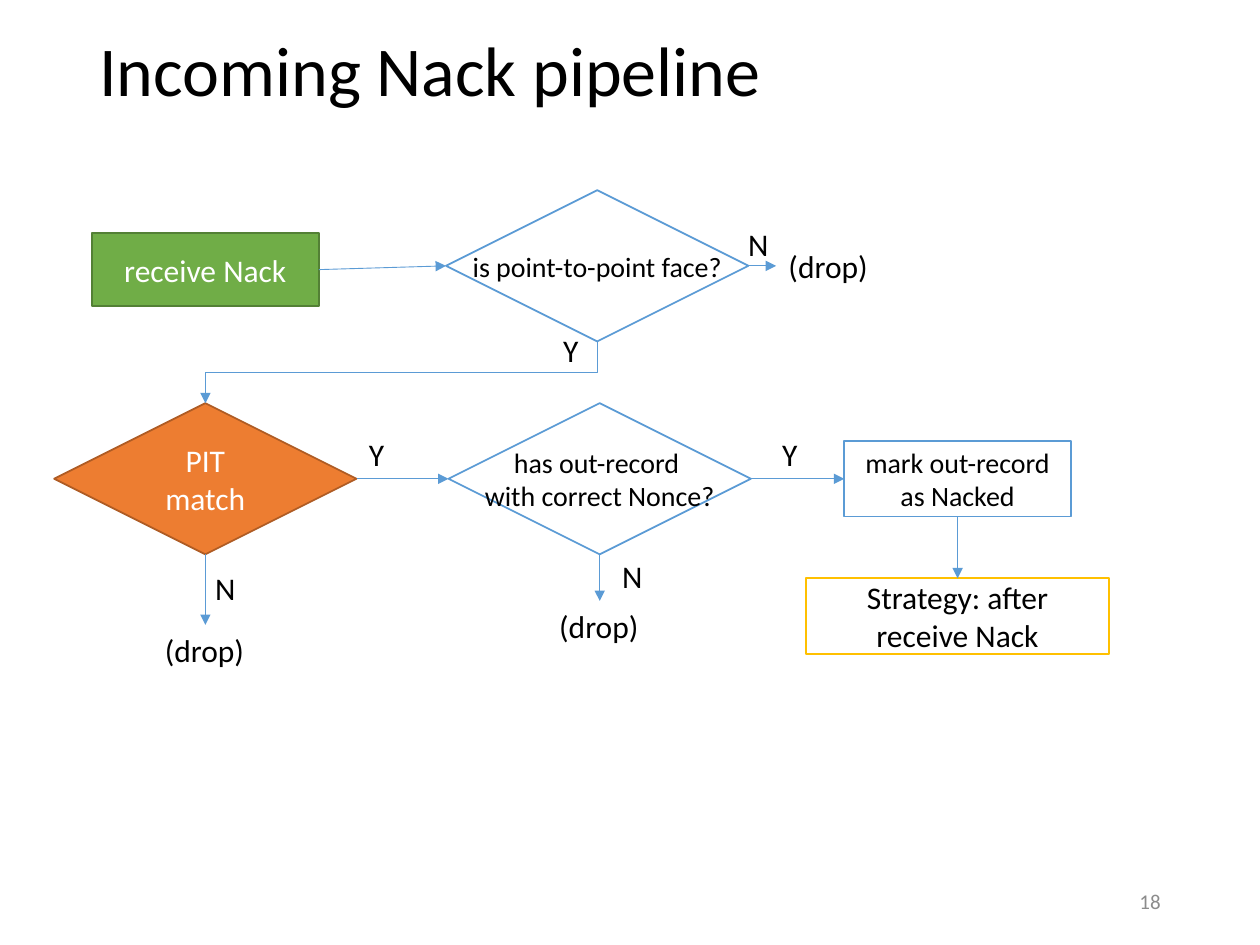
from dataclasses import dataclass

from lxml import etree
from pptx import Presentation
from pptx.dml.color import RGBColor
from pptx.enum.shapes import MSO_CONNECTOR, MSO_SHAPE
from pptx.enum.text import MSO_ANCHOR, MSO_AUTO_SIZE, PP_ALIGN
from pptx.oxml.ns import qn
from pptx.util import Inches, Pt

DECISION = MSO_SHAPE.FLOWCHART_DECISION
RECTANGLE = MSO_SHAPE.RECTANGLE
STRAIGHT, ELBOW = MSO_CONNECTOR.STRAIGHT, MSO_CONNECTOR.ELBOW
LEFT, CENTER, RIGHT = PP_ALIGN.LEFT, PP_ALIGN.CENTER, PP_ALIGN.RIGHT
TOP_ANCHOR, MIDDLE = MSO_ANCHOR.TOP, MSO_ANCHOR.MIDDLE
FIT_SHAPE = MSO_AUTO_SIZE.SHAPE_TO_FIT_TEXT
TOP_SIDE, LEFT_SIDE, BOTTOM_SIDE, RIGHT_SIDE = range(4)
QUARTER_TURN = "5400000"


@dataclass(frozen=True)
class Theme:
    font: str = "Calibri"
    black: str = "000000"
    white: str = "FFFFFF"
    gray: str = "8C8C8C"
    blue: str = "5B9BD5"
    green: str = "70AD47"
    dark_green: str = "538035"
    orange: str = "ED7D31"
    dark_orange: str = "AF5C24"
    gold: str = "FFC000"
    title_size: int = 40
    body_size: int = 18
    small_size: int = 16
    number_size: int = 12


THEME = Theme()
DECISION_SIZE = (2.4, 1.2)
STEP_SIZE = (1.8, 0.6)
DROP_SIZE = (0.84, 0.4)
YES_SIZE = (0.32, 0.4)
NO_SIZE = (0.36, 0.4)


def set_attributes(target, values):
    for name, value in values.items():
        setattr(target, name, value)


def write_text(shape, text, size, color, align, anchor, wrap=True):
    frame = shape.text_frame
    set_attributes(frame, {"word_wrap": wrap, "vertical_anchor": anchor})
    paragraph = frame.paragraphs[0]
    set_attributes(paragraph, {"text": text, "alignment": align})
    for run in paragraph.runs:
        set_attributes(run.font, {"name": THEME.font, "size": Pt(size)})
        run.font.color.rgb = RGBColor.from_string(color)
    return paragraph


def add_node(slide, kind, position, size, text, fill, line,
             color=THEME.black, text_size=THEME.body_size, wrap=True):
    shape = slide.shapes.add_shape(kind, *map(Inches, position + size))
    shape.shadow.inherit = False
    shape.fill.solid()
    shape.fill.fore_color.rgb = RGBColor.from_string(fill)
    shape.line.color.rgb = RGBColor.from_string(line)
    shape.line.width = Pt(1)
    write_text(shape, text, text_size, color, CENTER, MIDDLE, wrap)
    return shape


def add_text(slide, position, size, text, text_size, color, align):
    box = slide.shapes.add_textbox(*map(Inches, position + size))
    return write_text(box, text, text_size, color, align, MIDDLE)


def add_label(slide, position, size, text):
    box = slide.shapes.add_textbox(*map(Inches, position + size))
    write_text(box, text, THEME.body_size, THEME.black, LEFT, TOP_ANCHOR, False)
    box.text_frame.auto_size = FIT_SHAPE
    return box


def add_arrow(slide, source, source_side, target, target_side, kind=STRAIGHT):
    connector = slide.shapes.add_connector(kind, 0, 0, 0, 0)
    connector.begin_connect(source, source_side)
    connector.end_connect(target, target_side)
    connector.line.color.rgb = RGBColor.from_string(THEME.blue)
    connector.line.width = Pt(0.5)
    line = connector.line._get_or_add_ln()
    etree.SubElement(line, qn("a:tailEnd"), type="triangle")
    etree.SubElement(connector._element.spPr, qn("a:effectLst"))
    return connector


def turn_downward(connector):
    width, height = connector.width, connector.height
    set_attributes(connector, {
        "left": connector.left + (width - height) // 2,
        "top": connector.top + (height - width) // 2,
        "width": height,
        "height": width,
    })
    transform = connector._element.spPr.find(qn("a:xfrm"))
    transform.attrib.pop("flipH", None)
    transform.set("rot", QUARTER_TURN)


def add_flow(slide):
    pit_match = add_node(slide, DECISION, (0.43, 3.2), DECISION_SIZE, "PIT match",
                         THEME.orange, THEME.dark_orange, THEME.white)
    receive = add_node(slide, RECTANGLE, (0.73, 1.85), (1.8, 0.58), "receive Nack",
                       THEME.green, THEME.dark_green, THEME.white)
    strategy = add_node(slide, RECTANGLE, (6.4, 4.59), (2.4, 0.6),
                        "Strategy: after receive Nack", THEME.white, THEME.gold)
    mark = add_node(slide, RECTANGLE, (6.7, 3.5), STEP_SIZE, "mark out-record as Nacked",
                    THEME.white, THEME.blue, text_size=THEME.small_size)
    out_record, face = [
        add_node(slide, DECISION, position, DECISION_SIZE, text, THEME.white,
                 THEME.blue, text_size=THEME.small_size, wrap=False)
        for position, text in (
            ((3.56, 3.2), "has out-record \nwith correct Nonce?"),
            ((3.54, 1.51), "is point-to-point face?"),
        )
    ]
    pit_drop, record_drop, face_drop = [
        add_label(slide, position, DROP_SIZE, "(drop)")
        for position in ((1.21, 4.96), (4.34, 4.77), (6.16, 1.91))
    ]
    for position in ((2.83, 3.4), (6.11, 3.4), (4.37, 2.58)):
        add_label(slide, position, YES_SIZE, "Y")
    for position in ((1.61, 4.47), (4.84, 4.37), (5.84, 1.74)):
        add_label(slide, position, NO_SIZE, "N")

    for source, target in ((receive, face), (face, face_drop),
                           (pit_match, out_record), (out_record, mark)):
        add_arrow(slide, source, RIGHT_SIDE, target, LEFT_SIDE)
    for source, target in ((pit_match, pit_drop), (out_record, record_drop),
                           (mark, strategy)):
        add_arrow(slide, source, BOTTOM_SIDE, target, TOP_SIDE)
    turn_downward(add_arrow(slide, face, BOTTOM_SIDE, pit_match, TOP_SIDE, ELBOW))


def main():
    presentation = Presentation()
    set_attributes(presentation, {"slide_width": Inches(10), "slide_height": Inches(7.5)})
    slide = presentation.slides.add_slide(presentation.slide_layouts[6])
    title = add_text(slide, (0.69, 0.02), (8.62, 1.14), "Incoming Nack pipeline",
                     THEME.title_size, THEME.black, LEFT)
    title.line_spacing = 0.9
    add_flow(slide)
    add_text(slide, (7.06, 6.95), (2.25, 0.4), "18", THEME.number_size, THEME.gray, RIGHT)
    presentation.save("out.pptx")


if __name__ == "__main__":
    main()
